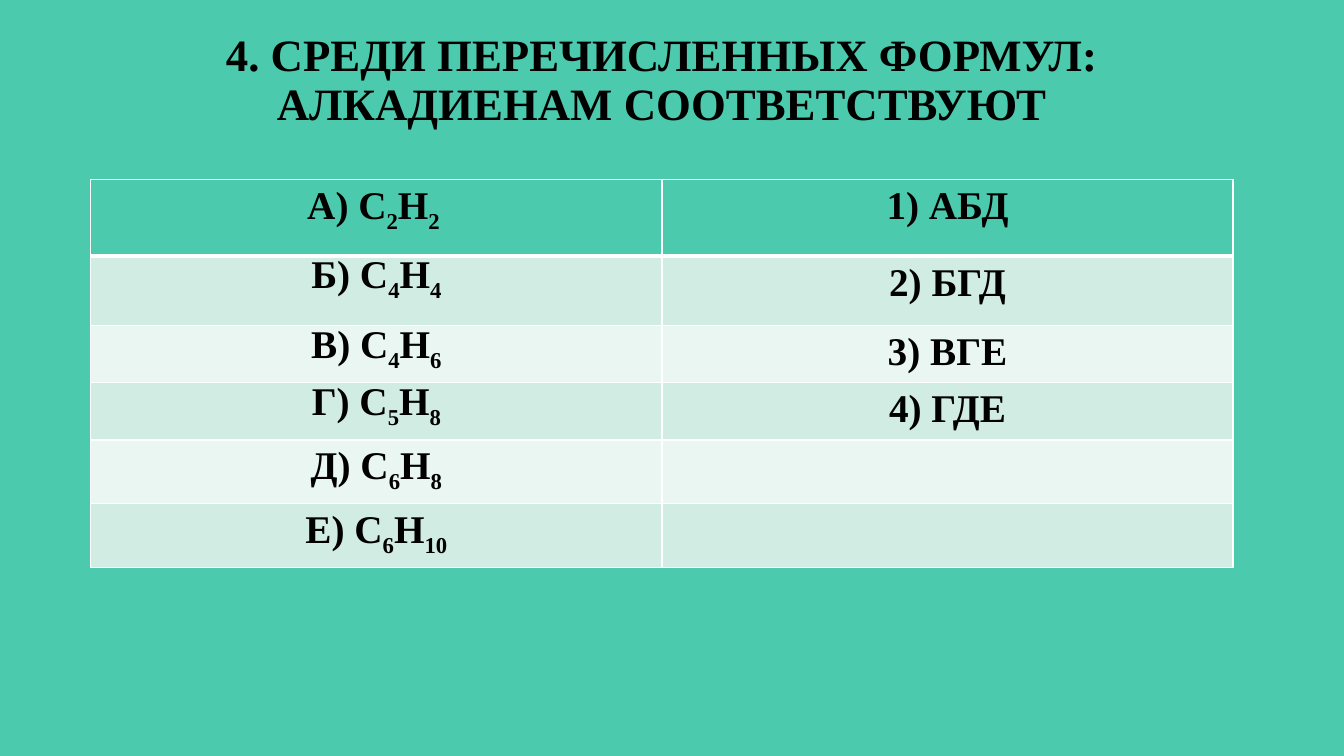
from lxml import etree
from pptx import Presentation
from pptx.dml.color import RGBColor
from pptx.enum import text
from pptx.oxml import ns
from pptx.util import Inches, Pt

GREEN, MINT, PALE = "4BCAAD", "D0ECE3", "E9F6F1"
WHITE, BLACK = "FFFFFF", "000000"


def color(value):
    return RGBColor.from_string(value)


def add_run(paragraph, words, size, subscript=False):
    run = paragraph.add_run()
    run.text = words
    run.font.name = "Times New Roman"
    run.font.size = Pt(size)
    run.font.bold = True
    run.font.color.rgb = color(BLACK)
    if subscript:
        run.font._element.set("baseline", "-25000")


prs = Presentation()
prs.slide_width, prs.slide_height = Inches(13.33), Inches(7.5)
slide = prs.slides.add_slide(prs.slide_layouts[6])
slide.background.fill.solid()
slide.background.fill.fore_color.rgb = color(GREEN)

# Question
question = slide.shapes.add_textbox(Inches(0.9), Inches(0.18), Inches(11.33), Inches(1.6)).text_frame
question.word_wrap = True
question.margin_top = Inches(0.15)
heading = question.paragraphs[0]
heading.alignment = text.PP_ALIGN.CENTER
heading.line_spacing = 0.9
add_run(heading, "4. СРЕДИ ПЕРЕЧИСЛЕННЫХ ФОРМУЛ:", 32)
heading.add_line_break()
add_run(heading, "АЛКАДИЕНАМ СООТВЕТСТВУЮТ", 32)

# Formulas as (text, subscript) pieces, answer choice, row height, tight spacing
rows = [
    (["А) С", "2", "Н", "2 "], "1) АБД", 0.76, False),
    (["Б) С", "4", "Н", "4"], "2) БГД", 0.69, True),
    (["В) С", "4", "Н", "6"], "3) ВГЕ", 0.53, True),
    (["Г) С", "5", "Н", "8"], "4) ГДЕ", 0.53, True),
    (["Д) С", "6", "Н", "8"], "", 0.59, False),
    (["Е) С", "6", "Н", "10"], "", 0.59, False),
]
table = slide.shapes.add_table(len(rows), 2, Inches(0.9), Inches(1.78),
                               Inches(11.33), Inches(3.69)).table

for r, (formula, answer, height, tight) in enumerate(rows):
    table.rows[r].height = Inches(height)
    for c, pieces in enumerate([formula, [answer]]):
        cell = table.cell(r, c)

        # White borders, thicker under the first row
        properties = cell._tc.get_or_add_tcPr()
        for side in "LRTB":
            thick = (r, side) in [(0, "B"), (1, "T")]
            line = etree.SubElement(properties, ns.qn(f"a:ln{side}"), w=str(Pt(3 if thick else 1)))
            fill = etree.SubElement(line, ns.qn("a:solidFill"))
            etree.SubElement(fill, ns.qn("a:srgbClr"), val=WHITE)
        cell.fill.solid()
        cell.fill.fore_color.rgb = color(GREEN if r == 0 else MINT if r % 2 else PALE)

        # Cell text, every second piece being a subscript
        paragraph = cell.text_frame.paragraphs[0]
        paragraph.alignment = text.PP_ALIGN.CENTER
        if tight and c == 0:
            paragraph.line_spacing = 0.7
            paragraph.space_after = Pt(8)
        for i, piece in enumerate(pieces):
            if piece:
                add_run(paragraph, piece, 28, subscript=i % 2 == 1)

prs.save("out.pptx")
